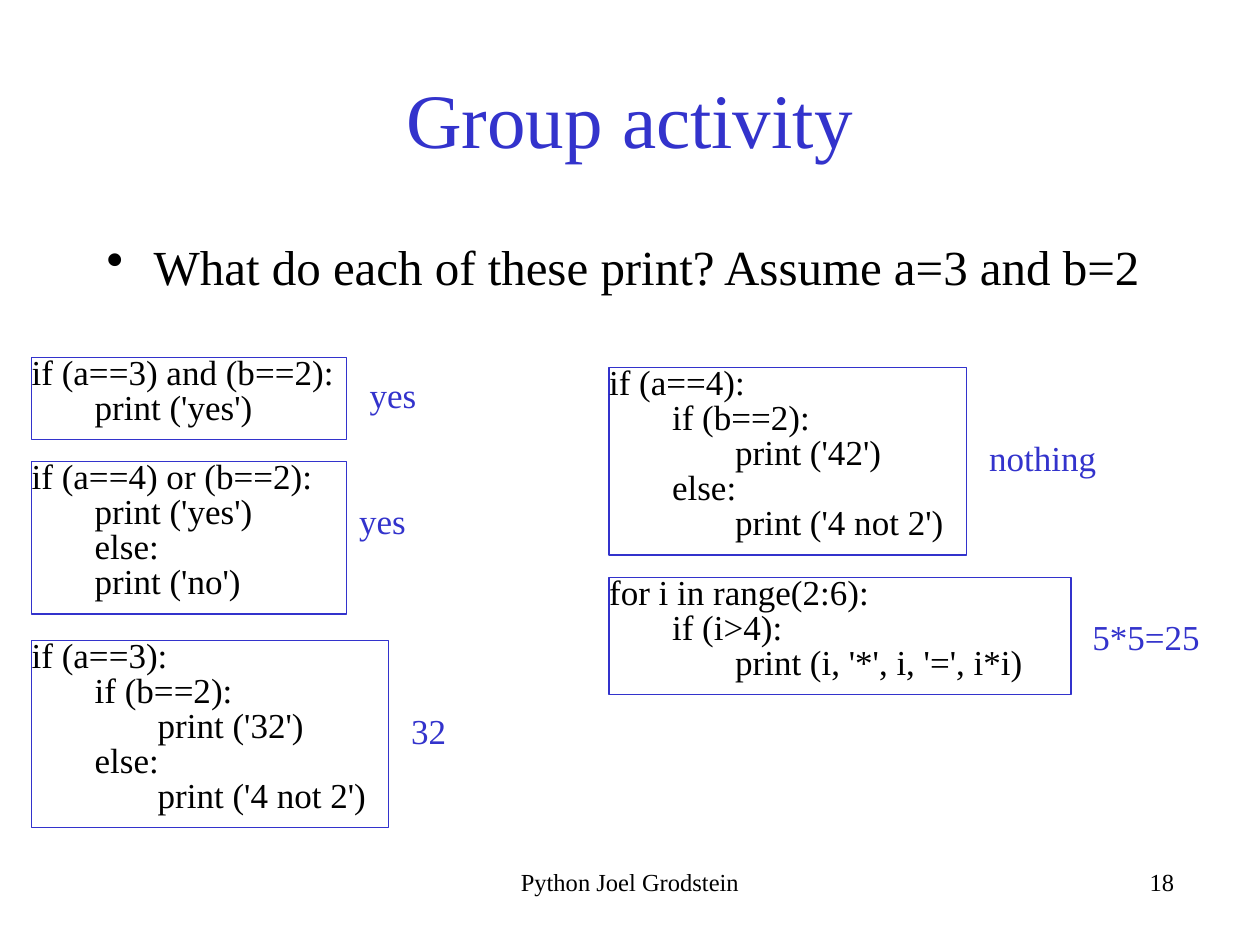
import pptx
import pptx.util
import pptx.dml.color
import pptx.enum.shapes
import pptx.enum.text
from lxml import etree
from pptx.util import Cm, Pt

FONT = "Times New Roman"
BLUE = pptx.dml.color.RGBColor(0x33, 0x33, 0xCC)
BLACK = pptx.dml.color.RGBColor(0, 0, 0)
ALIGN = pptx.enum.text.PP_ALIGN
ANCHOR = pptx.enum.text.MSO_ANCHOR

TITLE = "Group activity"
QUESTION = "What do each of these print? Assume a=3 and b=2"
FOOTERS = [  # text, left in cm, alignment
    ("Python Joel Grodstein", 8.68, ALIGN.CENTER),
    ("18", 15.88, ALIGN.RIGHT),
]
# Each exercise: left, top, width in cm; (level, code) lines;
# answer with its left, top, width in cm.
EXERCISES = [
    ((0.64, 7.2, 6.35),
     [(0, "if (a==3) and (b==2):"), (1, "print ('yes')")],
     ("yes", 7.2, 7.41, 1.69)),
    ((0.64, 9.31, 6.35),
     [(0, "if (a==4) or (b==2):"), (1, "print ('yes')"),
      (1, "else:"), (1, "print ('no')")],
     ("yes", 6.99, 9.95, 1.69)),
    ((0.64, 12.91, 7.2),
     [(0, "if (a==3):"), (1, "if (b==2):"), (2, "print ('32')"),
      (1, "else:"), (2, "print ('4 not 2')")],
     ("32", 8.04, 14.18, 1.69)),
    ((12.28, 7.41, 7.2),
     [(0, "if (a==4):"), (1, "if (b==2):"), (2, "print ('42')"),
      (1, "else:"), (2, "print ('4 not 2')")],
     ("nothing", 19.69, 8.68, 3.6)),
    ((12.28, 11.64, 9.31),
     [(0, "for i in range(2:6):"), (1, "if (i>4):"),
      (2, "print (i, '*', i, '=', i*i)")],
     ("5*5=25", 21.77, 12.28, 3.6)),
]
LINE_HEIGHT = Pt(20)
CODE_BOTTOM = Cm(0.25)
INDENT = Cm(1.27)


def add_run(para, text, size, color=BLACK):
    span = para.add_run()
    span.text = text
    span.font.name = FONT
    span.font.size = Pt(size)
    span.font.color.rgb = color


def set_indent(para, left, first=0):
    properties = para._p.get_or_add_pPr()
    properties.set("marL", str(int(left)))
    properties.set("indent", str(int(first)))
    return properties


def add_text(slide, text, left, top, width, height, size, color=BLACK, align=ALIGN.LEFT):
    box = slide.shapes.add_textbox(Cm(left), Cm(top), Cm(width), Cm(height))
    box.text_frame.word_wrap = True
    para = box.text_frame.paragraphs[0]
    para.alignment = align
    add_run(para, text, size, color)
    return para


def add_title(slide):
    title = slide.shapes.title
    title.left, title.top, title.width, title.height = Cm(1.9), Cm(0.79), Cm(21.59), Cm(3.18)
    title.text_frame.vertical_anchor = ANCHOR.MIDDLE
    para = title.text_frame.paragraphs[0]
    para.alignment = ALIGN.CENTER
    add_run(para, TITLE, 44, BLUE)


def add_question(slide):
    para = add_text(slide, QUESTION, 1.9, 4.65, 22.43, 1.7, 28)
    para.space_before = Pt(5.6)
    properties = set_indent(para, Cm(0.95), -Cm(0.95))
    bullet = etree.SubElement(properties, pptx.oxml.ns.qn("a:buChar"))
    bullet.set("char", "•")


def add_code(slide, left, top, width, lines):
    """Add an outlined box whose height follows from its number of lines."""
    height = LINE_HEIGHT * len(lines) + CODE_BOTTOM
    box = slide.shapes.add_shape(pptx.enum.shapes.MSO_SHAPE.RECTANGLE,
                                 Cm(left), Cm(top), Cm(width), height)
    box.shadow.inherit = False
    box.fill.background()
    box.line.color.rgb = BLUE
    box.line.width = Pt(0.75)
    frame = box.text_frame
    frame.word_wrap = True
    frame.vertical_anchor = ANCHOR.TOP
    frame.margin_left = frame.margin_right = frame.margin_top = 0
    frame.margin_bottom = CODE_BOTTOM
    for number, (level, code) in enumerate(lines):
        para = frame.add_paragraph() if number else frame.paragraphs[0]
        para.alignment = ALIGN.LEFT
        para.level = level
        para.line_spacing = LINE_HEIGHT
        set_indent(para, level * INDENT)
        add_run(para, code, 20)


def main():
    deck = pptx.Presentation()
    deck.slide_width, deck.slide_height = Cm(25.4), Cm(19.05)
    slide = deck.slides.add_slide(deck.slide_layouts[5])
    add_title(slide)
    add_question(slide)
    for place, lines, (answer, left, top, width) in EXERCISES:
        add_code(slide, *place, lines)
        add_text(slide, answer, left, top, width, 1.11, 20, BLUE)
    for text, left, align in FOOTERS:
        add_text(slide, text, left, 17.36, 8.04, 1.27, 14, align=align)
    deck.save("out.pptx")


if __name__ == "__main__":
    main()
